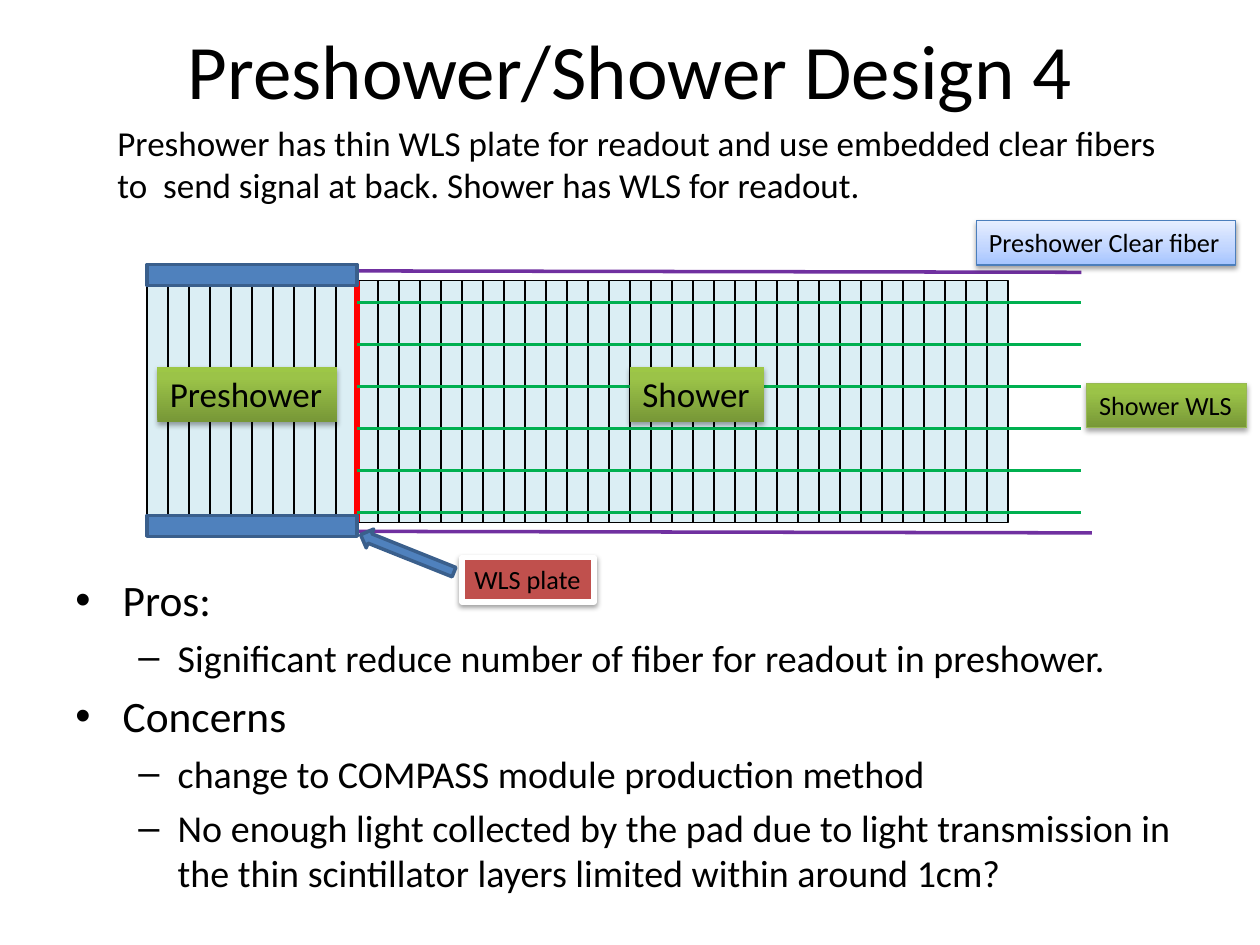
from lxml.etree import SubElement
from pptx import Presentation
from pptx.dml.color import RGBColor
from pptx.enum.shapes import MSO_CONNECTOR as Connector, MSO_SHAPE as Shape
from pptx.enum.text import MSO_ANCHOR as Anchor, PP_ALIGN as Align
from pptx.oxml.ns import qn
from pptx.util import Pt

FONT = "Calibri"
BLACK, WHITE, RED = "000000", "FFFFFF", "FF0000"
GREEN, PURPLE, PALE = "00B050", "7030A0", "DBEEF4"
BLUE, DARK_BLUE, BRICK = "4F81BD", "3A5F8C", "C0504D"
# Gradient stops run from the bottom edge to the top edge
GREEN_FADE = [(0, "779737"), (80, "9BC348"), (100, "9DC746")]
BLUE_FADE = [(0, "A4C4FF"), (35, "BFD4FF"), (100, "E6EEFF")]


def color(value):
    return RGBColor.from_string(value)


def format_text(paragraph, size):
    for run in paragraph.runs:
        run.font.name = FONT
        run.font.size = Pt(size)
        run.font.color.rgb = color(BLACK)


def add_text(slide, box, text, size, align=Align.LEFT, anchor=Anchor.TOP):
    shape = slide.shapes.add_textbox(*map(Pt, box))
    frame = shape.text_frame
    frame.word_wrap = True
    frame.vertical_anchor = anchor
    frame.text = text
    frame.paragraphs[0].alignment = align
    format_text(frame.paragraphs[0], size)


def add_line(slide, start, end, line_color, width):
    line = slide.shapes.add_connector(
        Connector.STRAIGHT, *map(Pt, (*start, *end)))
    line.line.color.rgb = color(line_color)
    line.line.width = Pt(width)
    SubElement(line._element.spPr, qn("a:effectLst"))


def set_gradient(shape, stops):
    shape.fill.gradient()
    shape.fill.gradient_angle = 90
    stop_list = shape._element.spPr.find(".//" + qn("a:gsLst"))
    stop_list[:] = []
    for position, value in stops:
        stop = SubElement(stop_list, qn("a:gs"), pos=str(position * 1000))
        SubElement(stop, qn("a:srgbClr"), val=value)


def set_shadow(shape, alpha, distance):
    effects = shape._element.spPr.find(qn("a:effectLst"))
    shadow = SubElement(effects, qn("a:outerShdw"), blurRad=str(Pt(3.1)),
                        dist=str(Pt(distance)), dir="5400000", rotWithShape="0")
    black = SubElement(shadow, qn("a:srgbClr"), val=BLACK)
    SubElement(black, qn("a:alpha"), val=str(alpha * 1000))


def add_block(slide, box, fill, line=None, width=0.75, kind=Shape.RECTANGLE):
    shape = slide.shapes.add_shape(kind, *map(Pt, box))
    shape.shadow.inherit = False
    if isinstance(fill, list):
        set_gradient(shape, fill)
    else:
        shape.fill.solid()
        shape.fill.fore_color.rgb = color(fill)
    if line:
        shape.line.color.rgb = color(line)
        shape.line.width = Pt(width)
    else:
        shape.line.fill.background()
    return shape


def add_label(slide, box, text, size, fill, line=None, width=0.75,
              shadow=(35, 1.8)):
    label = add_block(slide, box, fill, line, width)
    set_shadow(label, *shadow)
    frame = label.text_frame
    frame.word_wrap = False
    frame.vertical_anchor = Anchor.TOP
    frame.text = text
    frame.paragraphs[0].alignment = Align.LEFT
    format_text(frame.paragraphs[0], size)


def add_module(slide, box):
    left, top, width, height = box
    bottom = top + height
    pitch = 12
    preshower_width = 10 * pitch
    boundary = left + preshower_width
    add_block(slide, box, PALE, BLACK)

    # Scintillator layers, with the WLS plate at the boundary
    for x in range(left + pitch, left + width, pitch):
        style = (RED, 3) if x == boundary else (BLACK, 1)
        add_line(slide, (x, top), (x, bottom), *style)

    # Shower WLS fibers
    for row in range(6):
        y = top + 12.3 + row * 24
        add_line(slide, (boundary, y), (left + width + 42, y), GREEN, 1.5)

    # Preshower clear fibers
    add_line(slide, (left, top - 5.9), (left + width + 42, top - 4.9), PURPLE, 2)
    add_line(slide, (left, bottom + 4.9), (left + width + 48, bottom + 6), PURPLE, 2)

    # Bars above and below the preshower
    for y in (top - 9.3, bottom - 4):
        add_block(slide, (left, y, preshower_width, 12), BLUE, DARK_BLUE, 2)


def add_labels(slide):
    add_label(slide, (360, 209.5, 76.5, 31.5), "Shower", 20, GREEN_FADE)
    add_label(slide, (90, 209.5, 102.5, 31.5), "Preshower", 20, GREEN_FADE)
    add_label(slide, (621, 219, 91.5, 25.5), "Shower WLS", 15, GREEN_FADE, "98B955")
    add_label(slide, (558, 126, 148, 25.5), "Preshower Clear fiber", 15,
              BLUE_FADE, "4B7EBC", shadow=(38, 1.6))
    add_label(slide, (264, 318.5, 75.5, 25.5), "WLS plate", 15,
              BRICK, WHITE, 3, shadow=(38, 1.6))
    # Arrow from the label to the plate
    arrow = add_block(slide, (227, 287.5, 11.5, 57.5), BLUE, DARK_BLUE, 2,
                      Shape.UP_ARROW)
    arrow.rotation = 291.8


def add_bullets(slide, box, items):
    # Per level: size, space before, left margin, hanging indent, bullet
    levels = [(24.8, 5.5, 27, 27, "•"), (21.7, 5, 58.5, 22.5, "–")]
    frame = slide.shapes.add_textbox(*map(Pt, box)).text_frame
    frame.word_wrap = True
    for index, (level, text) in enumerate(items):
        size, space, margin, hanging, bullet = levels[level]
        paragraph = frame.add_paragraph() if index else frame.paragraphs[0]
        paragraph.text = text
        paragraph.level = level
        paragraph.space_before = Pt(space)
        format_text(paragraph, size)
        properties = paragraph._p.get_or_add_pPr()
        properties.set("marL", str(Pt(margin)))
        properties.set("indent", str(-Pt(hanging)))
        SubElement(properties, qn("a:buFont"), typeface="Arial")
        SubElement(properties, qn("a:buChar"), char=bullet)


def main():
    presentation = Presentation()
    presentation.slide_width, presentation.slide_height = Pt(720), Pt(540)
    slide = presentation.slides.add_slide(presentation.slide_layouts[6])

    # Title and summary
    add_text(slide, (36, -6, 648, 90), "Preshower/Shower Design 4", 44,
             Align.CENTER, Anchor.MIDDLE)
    add_text(slide, (60, 66, 624, 55.5),
             "Preshower has thin WLS plate for readout and use embedded clear "
             "fibers to  send signal at back. Shower has WLS for readout.", 20)

    # Detector drawing
    add_module(slide, (84, 160.5, 492, 138))
    add_labels(slide)

    # Pros and concerns
    add_bullets(slide, (36, 324, 648, 204), [
        (0, "Pros:"),
        (1, "Significant reduce number of fiber for readout in preshower."),
        (0, "Concerns"),
        (1, "change to COMPASS module production method"),
        (1, "No enough light collected by the pad due to light transmission in "
            "the thin scintillator layers limited within around 1cm?"),
    ])
    presentation.save("out.pptx")


if __name__ == "__main__":
    main()
